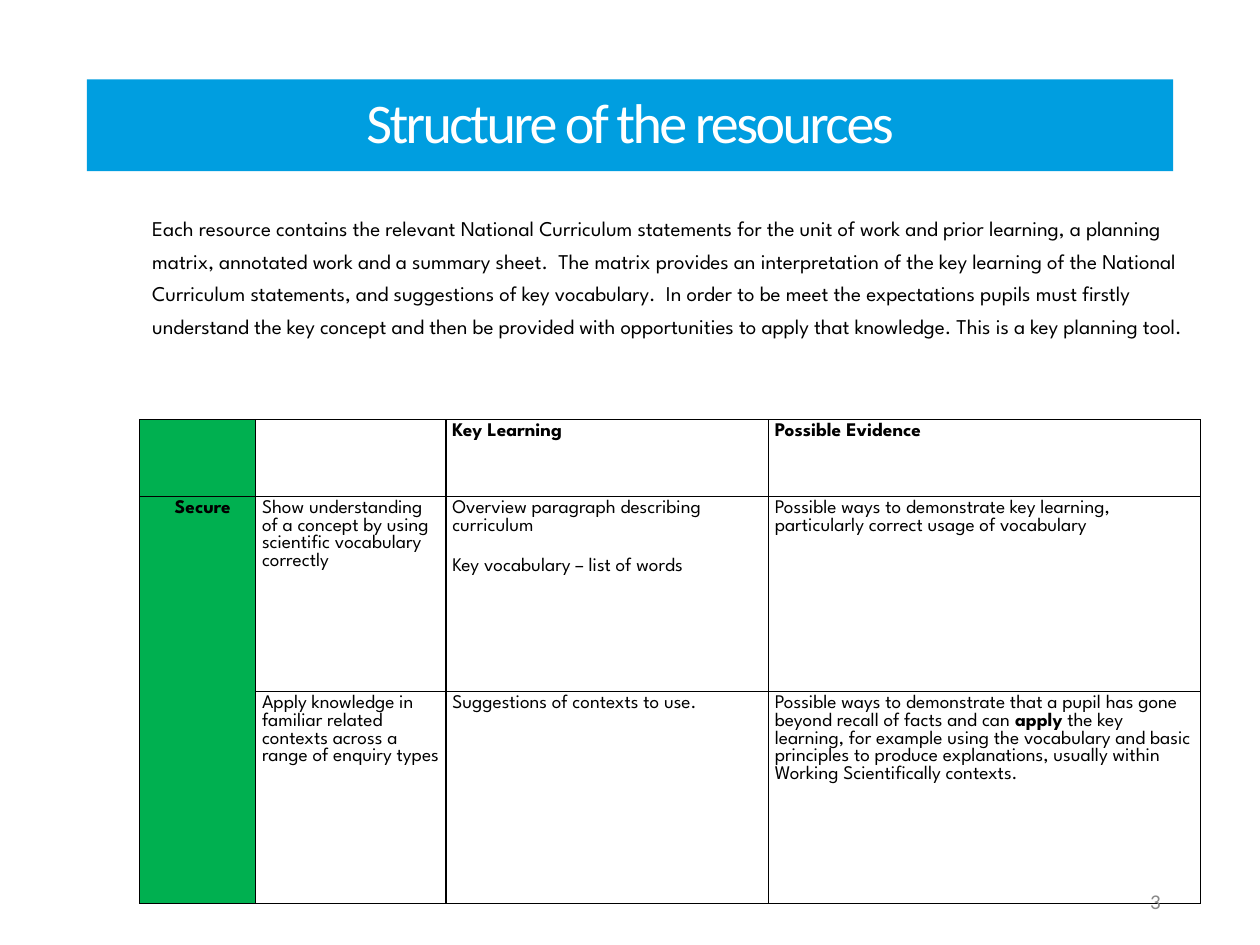
import pptx
import pptx.util
import pptx.dml.color
import pptx.enum.shapes
import pptx.enum.text
from lxml import etree

Inches, Pt = pptx.util.Inches, pptx.util.Pt
RGBColor = pptx.dml.color.RGBColor
ALIGN, ANCHOR = pptx.enum.text.PP_ALIGN, pptx.enum.text.MSO_ANCHOR

BLACK = RGBColor(0x00, 0x00, 0x00)
WHITE = RGBColor(0xFF, 0xFF, 0xFF)
GREY = RGBColor(0x89, 0x89, 0x89)
BLUE = RGBColor(0x00, 0x9E, 0xE0)
GREEN = RGBColor(0x00, 0xB0, 0x50)
SPARTAN, CALIBRI = "League Spartan", "Calibri"

# Content: a cell is a list of paragraphs, a paragraph a list of (text, bold)
TITLE = "Structure of the resources"
INTRODUCTION = (
    "Each resource contains the relevant National Curriculum statements for the unit of work "
    "and prior learning, a planning matrix, annotated work and a summary sheet. \u00a0The matrix "
    "provides an interpretation of the key learning of the National Curriculum statements, and "
    "suggestions of key vocabulary. \u00a0In order to be meet the expectations pupils must firstly "
    "understand the key concept and then be provided with opportunities to apply that knowledge. "
    "This is a key planning tool.")
PAGE_NUMBER = "3"
MATRIX = [
    [[], [], [[("Key Learning", True)]], [[("Possible Evidence", True)]]],
    [
        [[("Secure", True)]],
        [[("Show understanding of a concept by using scientific vocabulary correctly", False)]],
        [[("Overview paragraph describing curriculum", False)],
         [("Key vocabulary – list of words", False)]],
        [[("Possible ways to demonstrate key learning, particularly correct usage of vocabulary",
           False)]],
    ],
    [
        [],
        [[("Apply knowledge in familiar related contexts across a range of enquiry types", False)]],
        [[("Suggestions of contexts to use.", False)]],
        [[("Possible ways to demonstrate that a pupil has gone beyond recall of facts and can ",
           False),
          ("apply", True),
          (" the key learning, for example using the vocabulary and basic principles to produce "
           "explanations, usually within Working Scientifically contexts.", False)]],
    ],
]
COLUMN_WIDTHS = [0.92, 1.51, 2.56, 3.43]
ROW_HEIGHTS = [0.61, 1.55, 1.68]


def write(frame, paragraphs, font=SPARTAN, size=12, color=BLACK, align=ALIGN.LEFT,
          anchor=ANCHOR.MIDDLE, line_spacing=None, gap=0, tracking=None):
    """Fill a text frame with paragraphs of (text, bold) runs."""
    frame.word_wrap = True
    frame.vertical_anchor = anchor
    for index, runs in enumerate(paragraphs):
        paragraph = frame.add_paragraph() if index else frame.paragraphs[0]
        paragraph.alignment = align
        if line_spacing:
            paragraph.line_spacing = line_spacing
        if index:
            paragraph.space_before = Pt(gap)
        for text, bold in runs:
            run = paragraph.add_run()
            run.text = text
            run.font.name, run.font.size, run.font.bold = font, Pt(size), bold
            run.font.color.rgb = color
            if tracking:
                run.font._element.set("spc", str(int(tracking * 100)))


def add_borders(cell):
    """Draw a thin black line on each side; borders precede the fill in the XML."""
    properties = cell._tc.get_or_add_tcPr()
    namespace = "{http://schemas.openxmlformats.org/drawingml/2006/main}"
    for index, side in enumerate(("lnL", "lnR", "lnT", "lnB")):
        line = etree.Element(namespace + side, w=str(Pt(0.75)))
        fill = etree.SubElement(line, namespace + "solidFill")
        etree.SubElement(fill, namespace + "srgbClr", val=str(BLACK))
        properties.insert(index, line)


presentation = pptx.Presentation()
presentation.slide_width, presentation.slide_height = Inches(10), Inches(7.5)
slide = presentation.slides.add_slide(presentation.slide_layouts[6])

# Planning matrix
table = slide.shapes.add_table(
    len(ROW_HEIGHTS), len(COLUMN_WIDTHS), Inches(1.11), Inches(3.33),
    Inches(sum(COLUMN_WIDTHS)), Inches(sum(ROW_HEIGHTS))).table
table.first_row = table.horz_banding = False
for column, width in zip(table.columns, COLUMN_WIDTHS):
    column.width = Inches(width)
for row, height in zip(table.rows, ROW_HEIGHTS):
    row.height = Inches(height)
for row_index, row in enumerate(MATRIX):
    for column_index, paragraphs in enumerate(row):
        cell = table.cell(row_index, column_index)
        cell.margin_left = cell.margin_right = Inches(0.05)
        cell.margin_top = cell.margin_bottom = Inches(0.03)
        is_label = column_index == 0
        if is_label:
            cell.fill.solid()
            cell.fill.fore_color.rgb = GREEN
        else:
            cell.fill.background()
        add_borders(cell)
        write(cell.text_frame, paragraphs, size=11, anchor=ANCHOR.TOP, gap=13,
              align=ALIGN.CENTER if is_label else ALIGN.LEFT)
label = table.cell(1, 0)
label.merge(table.cell(2, 0))
label.text_frame.paragraphs[0]._p.get_or_add_pPr().set("marL", str(Inches(0.08)))

# Introduction
introduction = slide.shapes.add_textbox(Inches(1.11), Inches(1.61), Inches(8.42), Inches(1.42))
introduction.text_frame.margin_bottom = Inches(0.35)
write(introduction.text_frame, [[(INTRODUCTION, False)]], line_spacing=1.3)

# Page number
number = slide.shapes.add_textbox(Inches(7.06), Inches(6.95), Inches(2.25), Inches(0.4))
write(number.text_frame, [[(PAGE_NUMBER, False)]], font=CALIBRI, color=GREY, align=ALIGN.RIGHT)

# Title banner
banner = slide.shapes.add_shape(pptx.enum.shapes.MSO_SHAPE.RECTANGLE,
                                Inches(0.69), Inches(0.63), Inches(8.62), Inches(0.73))
banner.shadow.inherit = False
banner.fill.solid()
banner.fill.fore_color.rgb = BLUE
banner.line.fill.background()
write(banner.text_frame, [[(TITLE, False)]], font=CALIBRI, size=32, color=WHITE,
      align=ALIGN.CENTER, line_spacing=0.9, tracking=-1.5)

presentation.save("out.pptx")
